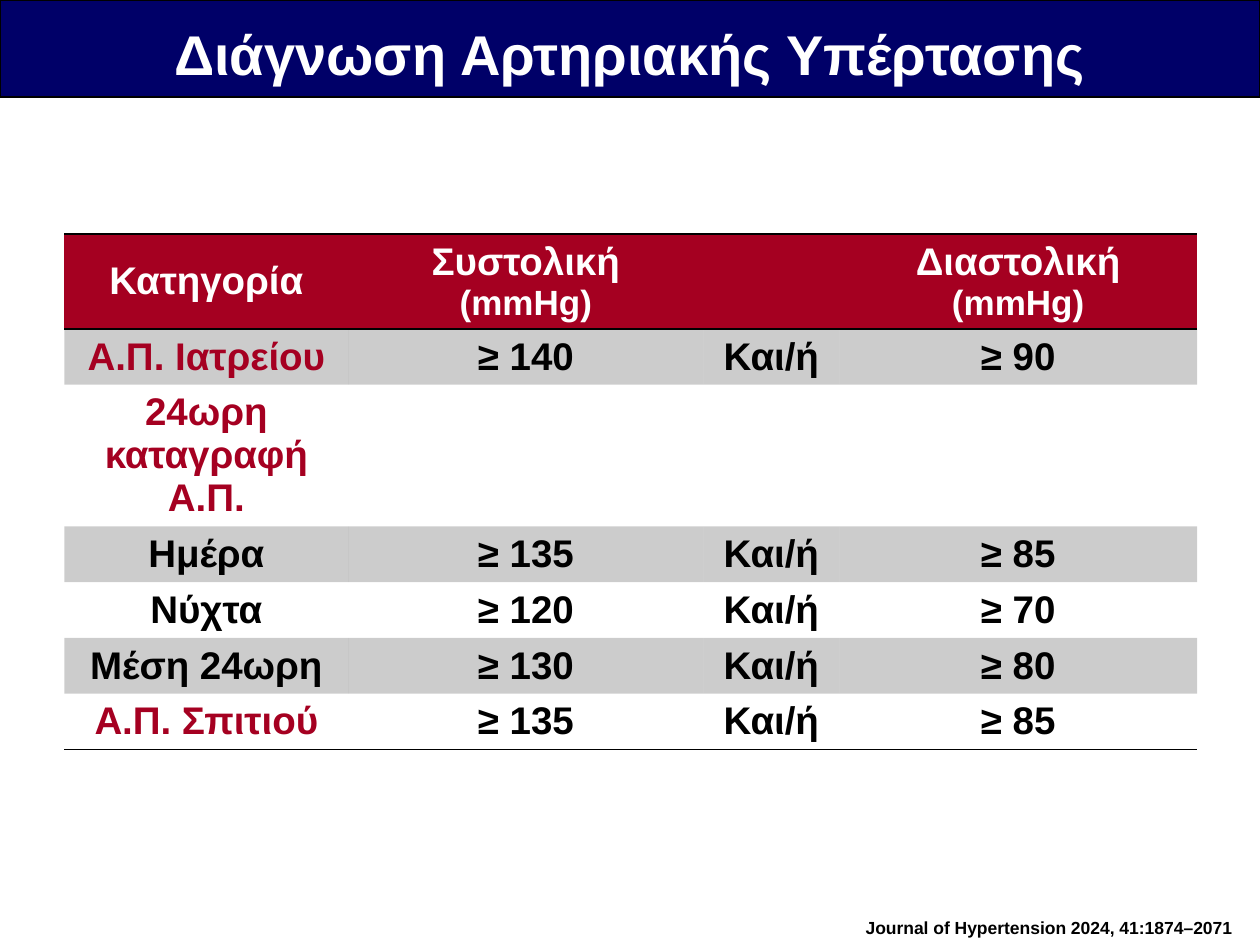
from lxml import etree
from pptx import Presentation
from pptx.dml.color import RGBColor
from pptx.enum.shapes import MSO_SHAPE
from pptx.enum.text import MSO_ANCHOR, MSO_AUTO_SIZE, PP_ALIGN
from pptx.oxml.ns import qn
from pptx.util import Cm, Pt

CENTER = PP_ALIGN.CENTER
TOP, MIDDLE = MSO_ANCHOR.TOP, MSO_ANCHOR.MIDDLE
NO_STYLE = "{2D5ABB26-0587-4C30-8999-92F81FD0307C}"
NAVY, RED, BLACK, WHITE = "000068", "A50021", "000000", "FFFFFF"

TITLE = "Διάγνωση Αρτηριακής Υπέρτασης"
SOURCE = "Journal of Hypertension 2024, 41:1874–2071"
HEADER = ["Κατηγορία", "Συστολική\n(mmHg)", "", "Διαστολική\n(mmHg)"]
AND_OR = "Και/ή"
ROWS = [
    ("Α.Π. Ιατρείου", "≥ 140", AND_OR, "≥ 90"),
    ("24ωρη καταγραφή Α.Π.", "", "", ""),
    ("Ημέρα", "≥ 135", AND_OR, "≥ 85"),
    ("Νύχτα", "≥ 120", AND_OR, "≥ 70"),
    ("Μέση 24ωρη", "≥ 130", AND_OR, "≥ 80"),
    ("Α.Π. Σπιτιού", "≥ 135", AND_OR, "≥ 85"),
]
RED_LABELS = {"Α.Π. Ιατρείου", "24ωρη καταγραφή Α.Π.", "Α.Π. Σπιτιού"}
COL_WIDTHS = [5.72, 7.16, 2.74, 7.21]
ROW_HEIGHT = 1.04


def rgb(value):
    """Turn a hex string into a colour."""
    return RGBColor.from_string(value)


def set_font(p, size, color):
    """Give a paragraph the slide's bold Arial."""
    font = p.font
    font.name, font.size, font.bold = "Arial", Pt(size), True
    font.color.rgb = rgb(color)


def fill_cell(cell, color, alpha=None):
    """Fill a cell, with an optional opacity in percent."""
    cell.fill.solid()
    cell.fill.fore_color.rgb = rgb(color)
    if alpha:
        clr = cell._tc.tcPr.find(".//" + qn("a:srgbClr"))
        etree.SubElement(clr, qn("a:alpha"), val=str(alpha * 1000))


def add_border(cell, side):
    """Draw a one-point black line on side T or B of a cell."""
    ln = etree.Element(qn("a:ln" + side), w=str(Pt(1)))
    fill = etree.SubElement(ln, qn("a:solidFill"))
    etree.SubElement(fill, qn("a:srgbClr"), val=BLACK)
    cell._tc.get_or_add_tcPr().insert(0, ln)


def write_cell(cell, text, color):
    """Write centred lines, with the unit line a little smaller."""
    cell.vertical_anchor = MIDDLE
    cell.text = text
    for p in cell.text_frame.paragraphs:
        p.alignment = CENTER
        set_font(p, 20 if p.text == "(mmHg)" else 22, color)


def add_title(s, width):
    """Place the title over a navy bar."""
    bar = s.shapes.add_shape(MSO_SHAPE.RECTANGLE, 0, 0, width, Cm(1.96))
    bar.shadow.inherit = False
    bar.fill.solid()
    bar.fill.fore_color.rgb = rgb(NAVY)
    bar.line.color.rgb = rgb(BLACK)
    bar.line.width = Pt(0.75)
    title = s.shapes.title
    title._element.addprevious(bar._element)
    title.left, title.top, title.width, title.height = 0, Cm(0.13), width, Cm(1.63)
    tf = title.text_frame
    tf.text = TITLE
    tf.auto_size = MSO_AUTO_SIZE.NONE
    tf.vertical_anchor = TOP
    tf.margin_top = Cm(0.26)
    p = tf.paragraphs[0]
    p.alignment, p.space_after = CENTER, Pt(6)
    set_font(p, 32, WHITE)


def add_thresholds(s):
    """Build the table of blood pressure thresholds."""
    frame = s.shapes.add_table(len(ROWS) + 1, len(HEADER), Cm(1.3), Cm(4.72),
                               Cm(sum(COL_WIDTHS)), Cm(11))
    table = frame.table
    table._tbl.tblPr.find(qn("a:tableStyleId")).text = NO_STYLE
    for column, width in zip(table.columns, COL_WIDTHS):
        column.width = Cm(width)
    for i, values in enumerate([HEADER, *ROWS]):
        table.rows[i].height = Cm(ROW_HEIGHT)
        for j, text in enumerate(values):
            cell = table.cell(i, j)
            color = WHITE if i == 0 else RED if text in RED_LABELS else BLACK
            write_cell(cell, text, color)
            if i == 0:
                fill_cell(cell, RED)
            elif i % 2:
                fill_cell(cell, BLACK, 20)
            else:
                cell.fill.background()
            if i in (0, len(ROWS)):
                add_border(cell, "B")
            if i == 0:
                add_border(cell, "T")
    frame.height = Cm(11)


def add_source(s):
    """Add the citation in the lower right corner."""
    tf = s.shapes.add_textbox(Cm(17.2), Cm(18.36), Cm(8.2), Cm(0.69)).text_frame
    tf.word_wrap = True
    tf.text = SOURCE
    set_font(tf.paragraphs[0], 10, BLACK)


def main():
    """Build and save the slide."""
    prs = Presentation()
    prs.slide_width, prs.slide_height = Cm(25.4), Cm(19.05)
    s = prs.slides.add_slide(prs.slide_layouts[5])
    add_thresholds(s)
    add_title(s, prs.slide_width)
    add_source(s)
    prs.save("out.pptx")


if __name__ == "__main__":
    main()
